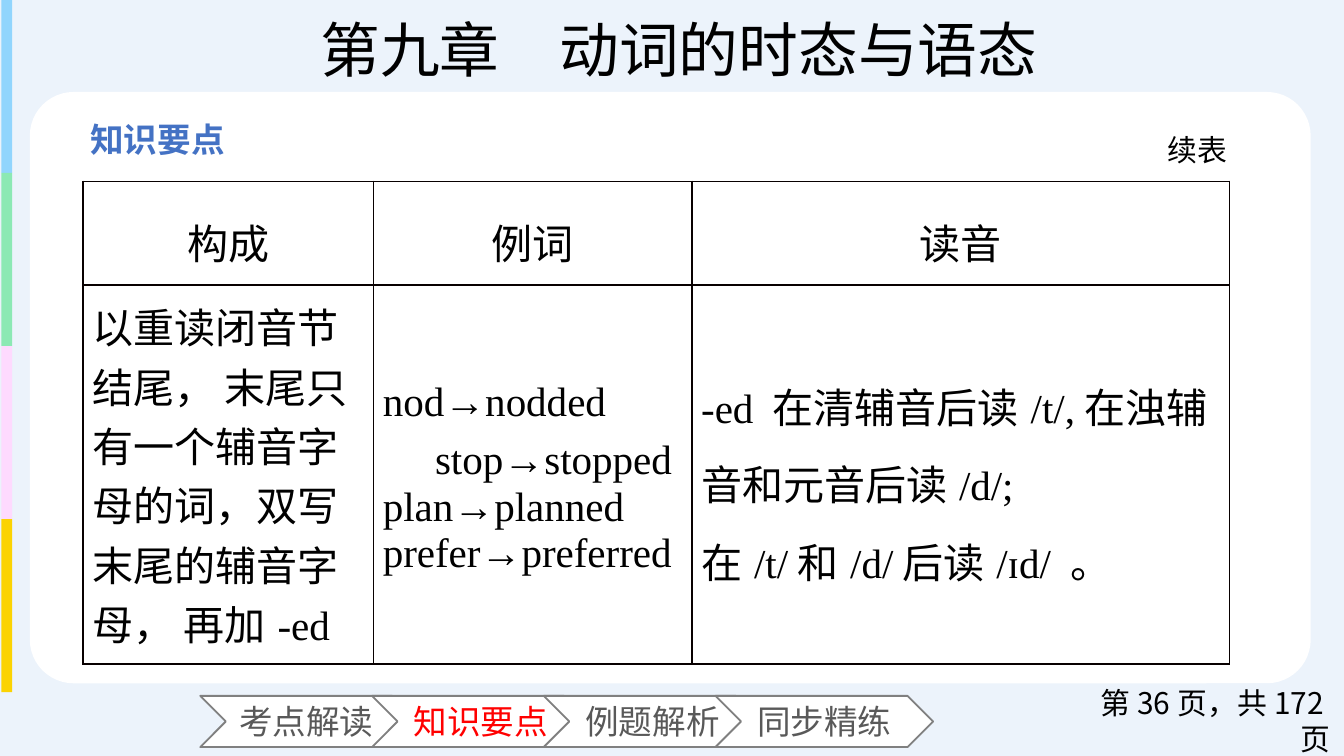
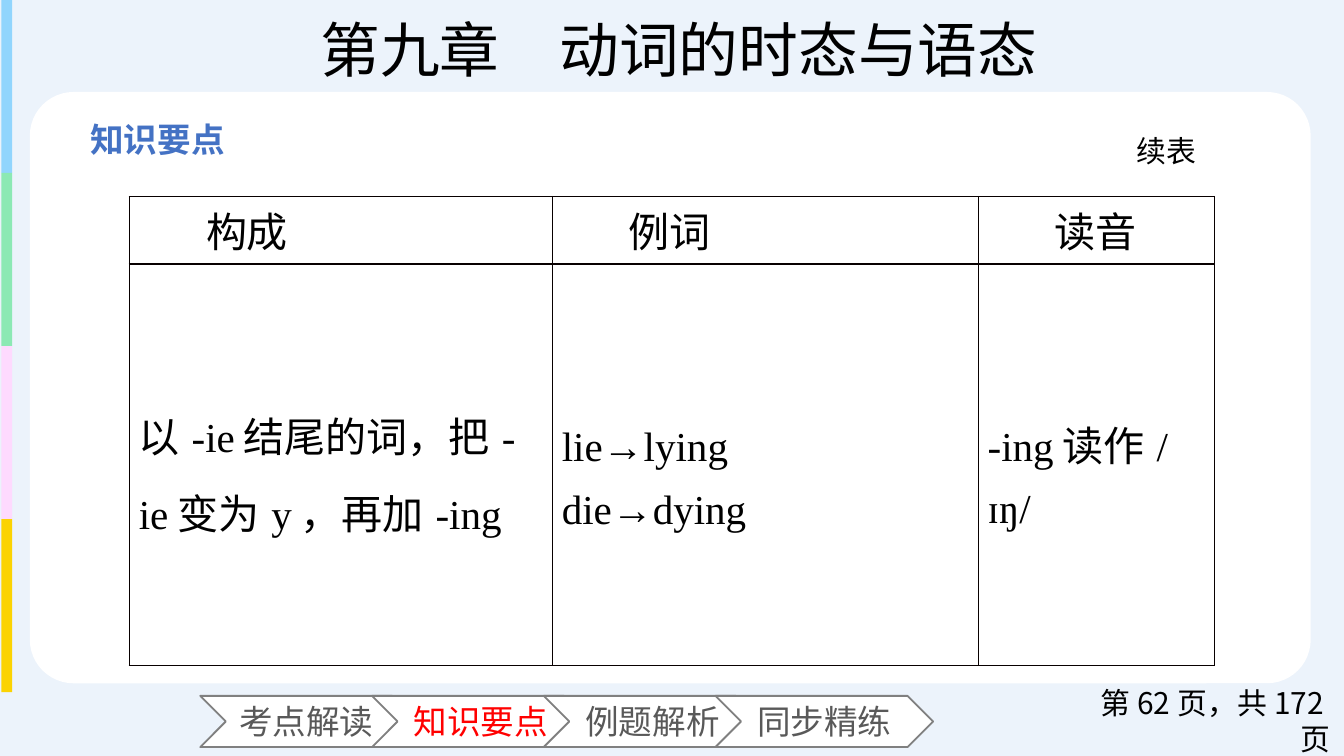
from lxml.etree import SubElement
from pptx import Presentation
from pptx.dml.color import RGBColor
from pptx.enum.shapes import MSO_SHAPE
from pptx.enum.text import MSO_ANCHOR, PP_ALIGN
from pptx.oxml.ns import qn
from pptx.util import Pt

# Shared look
SANS, SERIF = "Noto Sans CJK SC", "Times New Roman"
PAGE, WHITE, BLACK = "ECF3FB", "FFFFFF", "000000"
BLUE, RED, GREY, OUTLINE, RULE = "4472C4", "FF0000", "595959", "808080", "080000"
BAR_COLORS = ["91D5FD", "8CE9B4", "FEDAFE", "FBD302"]
CHAPTER = "第九章　动词的时态与语态"
SECTIONS = ["考点解读", "知识要点", "例题解析", "同步精练"]
CURRENT = "知识要点"
PAGE_COUNT = 172
HEADERS = ["构成", "例词", "读音"]

LABEL = {"name": SANS, "size": Pt(16)}
SECTION = {"name": SANS, "size": Pt(18)}
CELL = {"name": SERIF, "size": Pt(22)}

# Each cell is a list of (text, paragraph format)
WIDE = {"line_spacing": 1.3}
DOUBLING = {
    "page": 36, "label": (618.5, 67), "at": (44.6, 97.2),
    "cols": [155.5, 170.6, 288], "rows": [55.4, 203], "top": [0, 4, 0],
    "head": {"line_spacing": 1.3, "alignment": PP_ALIGN.CENTER},
    "body": [
        [("以重读闭音节结尾， 末尾只有一个辅音字母的词，双写末尾的辅音字母， 再加-ed", {})],
        [("nod→nodded", {}),
         ("stop→stopped", {"space_before": Pt(7), "marL": 28}),
         ("plan→planned prefer→preferred", {"space_before": Pt(1)})],
        [("-ed 在清辅音后读/t/,在浊辅音和元音后读/d/;", WIDE), ("在/t/和/d/后读/ɪd/ 。", WIDE)],
    ],
}
# The short header row needs single line spacing to hold its words
IE_ENDING = {
    "page": 62, "label": (602, 67.7), "at": (69.4, 105.3),
    "cols": [226.6, 228.2, 126.5], "rows": [36, 215.3], "top": [0, 8, 0],
    "head": {"line_spacing": 1.0, "indent": 36},
    "body": [
        [("以-ie结尾的词，把-ie变为y，再加-ing", WIDE)],
        [("lie→lying", WIDE), ("die→dying", {"space_before": Pt(2), **WIDE})],
        [("-ing读作/ɪŋ/", WIDE)],
    ],
}


def rgb(color):
    return RGBColor.from_string(color)


def write(p, text, font, color=BLACK, **layout):
    """Fill a paragraph; marL and indent are in points."""
    for key, value in layout.items():
        if key in ("marL", "indent"):
            p._p.get_or_add_pPr().set(key, str(int(Pt(value))))
        else:
            setattr(p, key, value)
    r = p.add_run()
    r.text = text
    for key, value in font.items():
        setattr(r.font, key, value)
    r.font.color.rgb = rgb(color)
    SubElement(r._r.get_or_add_rPr(), qn("a:ea"), typeface=SANS)


def add_box(s, kind, at, fill, line=None):
    sp = s.shapes.add_shape(kind, *map(Pt, at))
    sp.shadow.inherit = False
    sp.fill.solid()
    sp.fill.fore_color.rgb = rgb(fill)
    if line:
        sp.line.color.rgb = rgb(line)
        sp.line.width = Pt(1)
    else:
        sp.line.fill.background()
    return sp


def add_text(s, at, text, font, color=BLACK, anchor=MSO_ANCHOR.TOP, **layout):
    tf = s.shapes.add_textbox(*map(Pt, at)).text_frame
    tf.word_wrap = True
    tf.vertical_anchor = anchor
    write(tf.paragraphs[0], text, font, color, **layout)


def add_title(s, text):
    sp = s.shapes.title
    sp.left, sp.top, sp.width, sp.height = map(Pt, (127, 3, 473.8, 46))
    tf = sp.text_frame
    tf.margin_top = tf.margin_bottom = 0
    tf.vertical_anchor = MSO_ANCHOR.MIDDLE
    write(tf.paragraphs[0], text, {"name": SERIF, "size": Pt(32)},
          alignment=PP_ALIGN.CENTER)


def add_frame(s):
    # Colour bars on the left edge and the white card
    height = 92.7
    for i, color in enumerate(BAR_COLORS):
        add_box(s, MSO_SHAPE.RECTANGLE, (0.7, i * height, 5.8, height), color)
    card = add_box(s, MSO_SHAPE.ROUNDED_RECTANGLE, (16, 49.3, 686.2, 316.8), WHITE)
    card.adjustments[0] = 0.074
    add_text(s, (41.3, 60.2, 129.6, 28.8), CURRENT, {**SECTION, "bold": True}, BLUE)


def add_navigation(s):
    for i, name in enumerate(SECTIONS):
        sp = add_box(s, MSO_SHAPE.CHEVRON, (107.3 + 92 * i, 372.8, 116.6, 27.4), WHITE, OUTLINE)
        tf = sp.text_frame
        tf.vertical_anchor = MSO_ANCHOR.MIDDLE
        write(tf.paragraphs[0], name, SECTION, RED if name == CURRENT else GREY,
              alignment=PP_ALIGN.CENTER if i else PP_ALIGN.JUSTIFY)


def add_borders(cell):
    tcPr = cell._tc.get_or_add_tcPr()
    for side in ("lnL", "lnR", "lnT", "lnB"):
        ln = SubElement(tcPr, qn("a:" + side), w=str(int(Pt(1))))
        SubElement(SubElement(ln, qn("a:solidFill")), qn("a:srgbClr"), val=RULE)


def fill_cell(cell, paragraphs, top=0):
    add_borders(cell)
    cell.fill.background()
    cell.vertical_anchor = MSO_ANCHOR.MIDDLE
    cell.margin_left = cell.margin_right = Pt(5)
    cell.margin_top, cell.margin_bottom = Pt(top), 0
    tf = cell.text_frame
    for i, (text, layout) in enumerate(paragraphs):
        p = tf.add_paragraph() if i else tf.paragraphs[0]
        write(p, text, CELL, **layout)


def add_rule_table(s, content):
    cols, rows = content["cols"], content["rows"]
    size = (sum(cols), sum(rows))
    table = s.shapes.add_table(len(rows), len(cols), *map(Pt, content["at"] + size)).table
    table.first_row = table.horz_banding = False
    for row, height in zip(table.rows, rows):
        row.height = Pt(height)
    for i, width in enumerate(cols):
        table.columns[i].width = Pt(width)
        fill_cell(table.cell(0, i), [(HEADERS[i], content["head"])])
        fill_cell(table.cell(1, i), content["body"][i], content["top"][i])


def add_rule_slide(prs, content):
    s = prs.slides.add_slide(prs.slide_layouts[5])
    s.background.fill.solid()
    s.background.fill.fore_color.rgb = rgb(PAGE)
    add_frame(s)
    add_title(s, CHAPTER)
    add_navigation(s)
    add_text(s, (573.8, 375.1, 146.2, 21.6), f"第{content['page']}页，共{PAGE_COUNT}页",
             LABEL, anchor=MSO_ANCHOR.MIDDLE, alignment=PP_ALIGN.RIGHT)
    add_rule_table(s, content)
    add_text(s, content["label"] + (55.4, 19.4), "续表", LABEL)


def main():
    prs = Presentation()
    prs.slide_width, prs.slide_height = Pt(720), Pt(405)
    for content in (DOUBLING, IE_ENDING):
        add_rule_slide(prs, content)
    prs.save("out.pptx")


if __name__ == "__main__":
    main()
